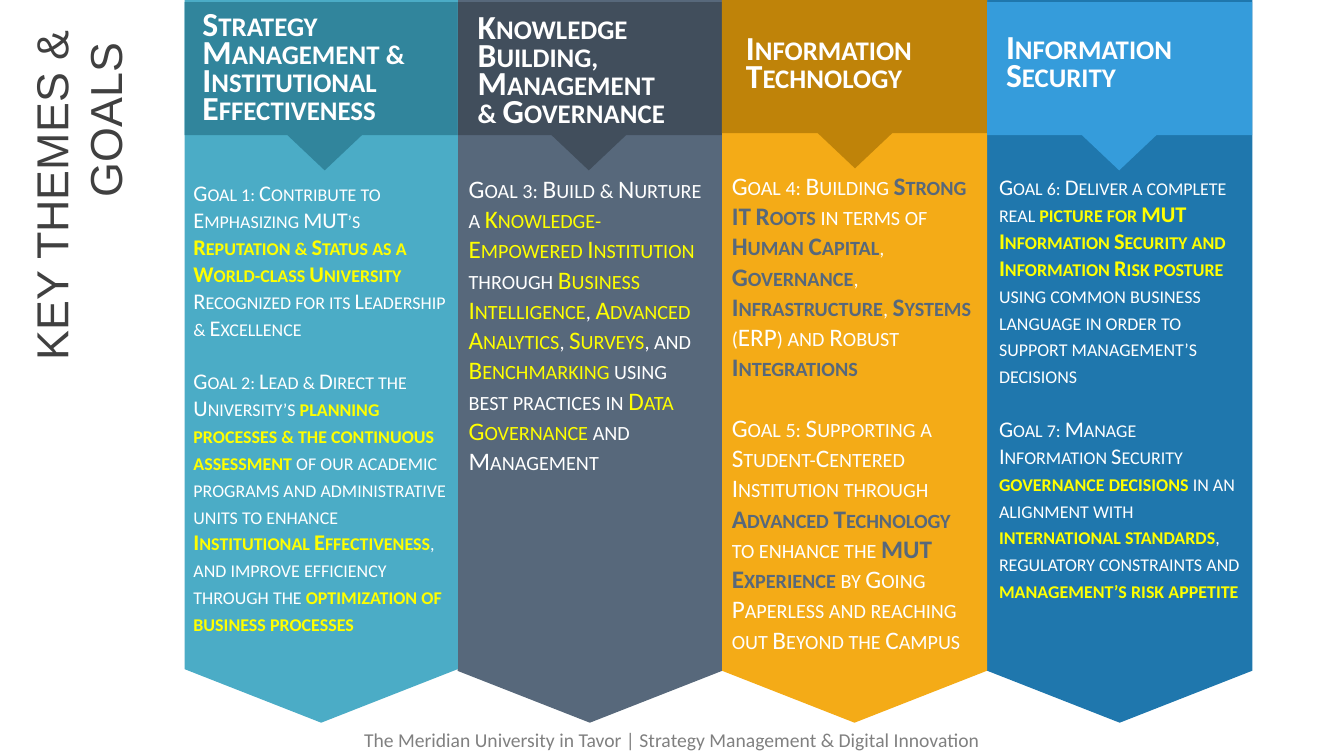
from pptx import Presentation
from pptx.dml.color import RGBColor
from pptx.enum.shapes import MSO_SHAPE
from pptx.enum.text import PP_ALIGN
from pptx.util import Inches, Pt

WHITE, YELLOW, SLATE = "FFFFFF", "FFFF00", "57687B"
BANNER_H, HEADER_H = 7.17, 1.32
ARROW_W, ARROW_H = 0.74, 0.35

# Themes from left to right; asterisks enclose the highlighted words
THEMES = [
    dict(left=1.83, width=2.71, top=0.02, fill="4BACC6", dark="31859C", arrow=2.85,
         title="Strategy Management & Institutional Effectiveness",
         title_box=(1.91, 0.1, 2.25, 1.24),
         goals_box=(1.82, 1.73, 2.71, 4.95), size=16, accent=YELLOW, bold=True,
         goals=["Goal 1: Contribute to Emphasizing MUT’s *Reputation & Status as a "
                "World-class University *Recognized for its Leadership & Excellence",
                "Goal 2: Lead & Direct the University’s *planning processes & the "
                "continuous assessment *of our academic programs and administrative "
                "units to enhance *Institutional Effectiveness*, and improve efficiency "
                "through the *optimization of business processes*"]),
    dict(left=4.54, width=2.62, top=0.02, fill=SLATE, dark="414E5C", arrow=5.47,
         title="Knowledge Building, Management & Governance",
         title_box=(4.64, 0.13, 2.2, 1.24),
         goals_box=(4.55, 1.67, 2.59, 3.13), size=18, accent=YELLOW, bold=False,
         goals=["Goal 3: Build & Nurture a *Knowledge-Empowered Institution* through "
                "*Business Intelligence*, *Advanced Analytics*, *Surveys*, and "
                "*Benchmarking* using best practices in *Data Governance* and "
                "Management"]),
    dict(left=7.16, width=2.63, top=0, fill="F4AB17", dark="BF8309", arrow=8.11,
         title="Information Technology",
         title_box=(7.3, 0.34, 2.2, 0.66),
         goals_box=(7.16, 1.64, 2.61, 4.95), size=18, accent=SLATE, bold=True,
         goals=["Goal 4: Building *Strong IT Roots *in terms of *Human Capital*, "
                "*Governance*, *Infrastructure*, *Systems* (ERP) and Robust "
                "*Integrations*",
                "Goal 5: Supporting a Student-Centered Institution through *Advanced "
                "Technology *to enhance the *MUT Experience* by Going Paperless and "
                "reaching out Beyond the Campus"]),
    dict(left=9.79, width=2.63, top=0.02, fill="1F77AD", dark="359CDB", arrow=10.73,
         title="Information Security",
         title_box=(9.88, 0.33, 2.2, 0.68),
         goals_box=(9.81, 1.67, 2.61, 4.41), size=16, accent=YELLOW, bold=True,
         goals=["Goal 6: Deliver a complete real *picture for MUT Information Security "
                "and Information Risk posture *using common business language in order "
                "to support management’s decisions",
                "Goal 7: Manage Information Security *governance decisions *in an "
                "alignment with *international standards*, regulatory constraints and "
                "*management’s risk appetite*"]),
]


def rgb(value):
    return RGBColor.from_string(value)


def add_block(shapes, kind, box, fill, rotation=0):
    sp = shapes.add_shape(kind, *map(Inches, box))
    sp.shadow.inherit = False
    sp.fill.solid()
    sp.fill.fore_color.rgb = rgb(fill)
    sp.line.fill.background()
    sp.rotation = rotation
    return sp


def add_run(p, text, color, small_caps=False, **font):
    r = p.add_run()
    r.text = text
    r.font.color.rgb = rgb(color)
    for name, value in font.items():
        setattr(r.font, name, value)
    if small_caps:
        r.font._element.set("cap", "small")


def add_text(s, box, paragraphs, color, size, name="Calibri", accent=None,
             accent_bold=False, rotation=0, bold=False, small_caps=False, **layout):
    sp = s.shapes.add_textbox(*map(Inches, box))
    sp.rotation = rotation
    tf = sp.text_frame
    tf.word_wrap = True
    for i, text in enumerate(paragraphs):
        p = tf.paragraphs[0] if i == 0 else tf.add_paragraph()
        if i:
            p.space_before = Pt(size * 1.2)
        for key, value in layout.items():
            setattr(p, key, value)
        for j, part in enumerate(text.split("*")):
            if part:
                marked = j % 2 == 1
                add_run(p, part, accent if marked else color, small_caps,
                        name=name, size=Pt(size),
                        bold=accent_bold if marked else bold)


def add_banner(s, theme):
    # The pentagon is turned to point down, so its sides swap about the centre
    left = theme["left"] + (theme["width"] - BANNER_H) / 2
    top = (BANNER_H - theme["width"]) / 2
    sp = add_block(s.shapes, MSO_SHAPE.PENTAGON,
                   (left, top, BANNER_H, theme["width"]), theme["fill"], 90)
    sp.adjustments[0] = 0.196


def add_header(s, theme):
    group = s.shapes.add_group_shape()
    add_block(group.shapes, MSO_SHAPE.RECTANGLE,
              (theme["left"], theme["top"], theme["width"], HEADER_H), theme["dark"])
    add_block(group.shapes, MSO_SHAPE.ISOSCELES_TRIANGLE,
              (theme["arrow"], theme["top"] + HEADER_H, ARROW_W, ARROW_H),
              theme["dark"], 180)
    add_text(s, theme["title_box"], [theme["title"]], WHITE, 24, bold=True,
             small_caps=True, line_spacing=Pt(20))


def add_goals(s, theme):
    add_text(s, theme["goals_box"], theme["goals"], WHITE, theme["size"],
             accent=theme["accent"], accent_bold=theme["bold"], small_caps=True)


def main():
    prs = Presentation()
    prs.slide_width, prs.slide_height = Inches(13.33), Inches(7.5)
    s = prs.slides.add_slide(prs.slide_layouts[6])

    # Columns: banners overlap from right to left
    for theme in reversed(THEMES):
        add_banner(s, theme)
    for theme in THEMES:
        add_header(s, theme)
        add_goals(s, theme)

    # Vertical title and footer
    add_text(s, (-1.18, 1.57, 3.91, 1.18), ["KEY THEMES & GOALS "], "404040", 32,
             name="Arial", rotation=270, alignment=PP_ALIGN.RIGHT)
    add_text(s, (0, 7.17, 13.33, 0.34),
             ["The Meridian University in Tavor | Strategy Management & Digital Innovation"],
             "808080", 14, alignment=PP_ALIGN.CENTER)

    prs.save("out.pptx")


if __name__ == "__main__":
    main()
